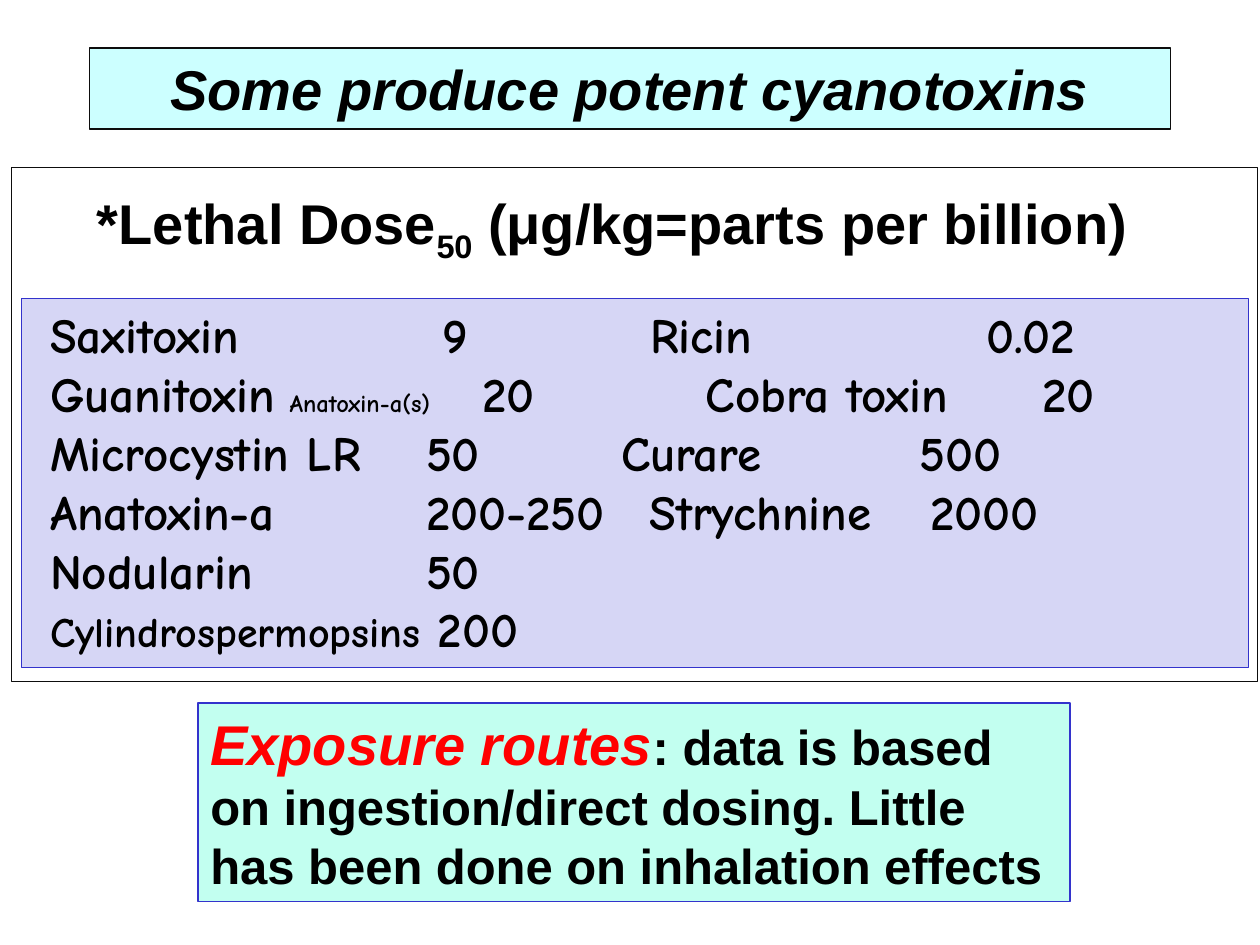
from lxml import etree
from pptx import Presentation
from pptx.dml.color import RGBColor
from pptx.enum.shapes import MSO_SHAPE
from pptx.enum.text import MSO_ANCHOR, PP_ALIGN
from pptx.oxml.ns import qn
from pptx.util import Cm, Pt

RECTANGLE = MSO_SHAPE.RECTANGLE
TOP = MSO_ANCHOR.TOP
LEFT, CENTER = PP_ALIGN.LEFT, PP_ALIGN.CENTER

BLACK = RGBColor(0x00, 0x00, 0x00)
RED = RGBColor(0xFF, 0x00, 0x00)
NEAR_BLACK = RGBColor(0x0D, 0x0D, 0x0D)
BLUE = RGBColor(0x33, 0x33, 0xCC)
LAVENDER = RGBColor(0xD6, 0xD6, 0xF5)
PALE_CYAN = RGBColor(0xCC, 0xFF, 0xFF)
MINT = RGBColor(0xC2, 0xFF, 0xF0)

HEADING_FONT, DOSE_FONT = "Arial", "Comic Neue"
HEADING_SIZE, BODY_SIZE, SMALL_SIZE, SYNONYM_SIZE = 32, 28, 24, 14

DOSE_ROWS = [
    ([("Saxitoxin\t9\tRicin\t0.02", BODY_SIZE)], (7.92, 12.1, 18.87)),
    ([("Guanitoxin", BODY_SIZE), (" ", SMALL_SIZE),
      ("Anatoxin-a(s)", SYNONYM_SIZE),
      ("\t20\tCobra toxin\t20", BODY_SIZE)], (8.71, 13.22, 20)),
    ([("Microcystin LR\t50\tCurare\t500", BODY_SIZE)], (7.58, 11.51, 17.52)),
    ([("Anatoxin-a\t200-250\tStrychnine\t2000", BODY_SIZE)], (7.58, 12.08, 17.74)),
    ([("Nodularin\t50", BODY_SIZE)], (7.58,)),
    ([("Cylindrospermopsins", SMALL_SIZE), (" 200", BODY_SIZE)], ()),
]


class ToxinSlide:
    def __init__(self, slide):
        self.slide = slide
        self.line_width = Pt(0.75)

    def panel(self, left, top, width, height, line, fill=None):
        shape = self.slide.shapes.add_shape(
            RECTANGLE, Cm(left), Cm(top), Cm(width), Cm(height))
        shape.shadow.inherit = False
        if fill is None:
            shape.fill.background()
        else:
            shape.fill.solid()
            shape.fill.fore_color.rgb = fill
        shape.line.color.rgb = line
        shape.line.width = self.line_width
        return self.prepare(shape.text_frame)

    def label(self, left, top, width, height):
        box = self.slide.shapes.add_textbox(
            Cm(left), Cm(top), Cm(width), Cm(height))
        return self.prepare(box.text_frame)

    def prepare(self, frame):
        frame.word_wrap = True
        frame.vertical_anchor = TOP
        return frame

    def align(self, paragraph, alignment, stops=()):
        paragraph.alignment = alignment
        if stops:
            properties = paragraph._p.get_or_add_pPr()
            tabs = etree.SubElement(properties, qn("a:tabLst"))
            for stop in stops:
                etree.SubElement(tabs, qn("a:tab"), pos=str(Cm(stop)), algn="l")

    def run(self, paragraph, text, size, font=HEADING_FONT, color=BLACK,
            italic=False, baseline=0):
        run = paragraph.add_run()
        run.text = text
        run.font.size = Pt(size)
        run.font.name = font
        run.font.bold = True
        run.font.italic = italic
        run.font.color.rgb = color
        if baseline:
            run._r.get_or_add_rPr().set("baseline", str(baseline * 1000))

    def dose_table(self, frame, rows):
        frame.margin_left = Cm(0.58)
        for index, (parts, stops) in enumerate(rows):
            row = frame.add_paragraph() if index else frame.paragraphs[0]
            self.align(row, LEFT, stops)
            for text, size in parts:
                self.run(row, text, size, DOSE_FONT)


def main():
    presentation = Presentation()
    presentation.slide_width, presentation.slide_height = Cm(25.4), Cm(19.05)
    page = ToxinSlide(presentation.slides.add_slide(presentation.slide_layouts[6]))

    dose_heading = page.label(1.07, 3.68, 22.56, 1.63).paragraphs[0]
    page.align(dose_heading, CENTER)
    page.run(dose_heading, "*Lethal Dose", HEADING_SIZE)
    page.run(dose_heading, "50", HEADING_SIZE, baseline=-25)
    page.run(dose_heading, " (μg/kg=parts per billion)", HEADING_SIZE)

    page.dose_table(page.panel(0.43, 6.02, 24.74, 7.44, BLUE, LAVENDER), DOSE_ROWS)
    page.panel(0.23, 3.38, 25.12, 10.36, NEAR_BLACK)

    title = page.panel(1.8, 0.97, 21.8, 1.63, NEAR_BLACK, PALE_CYAN).paragraphs[0]
    page.align(title, CENTER)
    page.run(title, "Some produce potent cyanotoxins", HEADING_SIZE, italic=True)

    exposure = page.panel(3.99, 14.17, 17.58, 4.01, BLUE, MINT).paragraphs[0]
    page.align(exposure, LEFT)
    page.run(exposure, "Exposure routes", HEADING_SIZE, color=RED, italic=True)
    page.run(exposure, ": data is based on ingestion/direct dosing. "
             "Little has been done on inhalation effects", BODY_SIZE)

    presentation.save("out.pptx")


if __name__ == "__main__":
    main()
